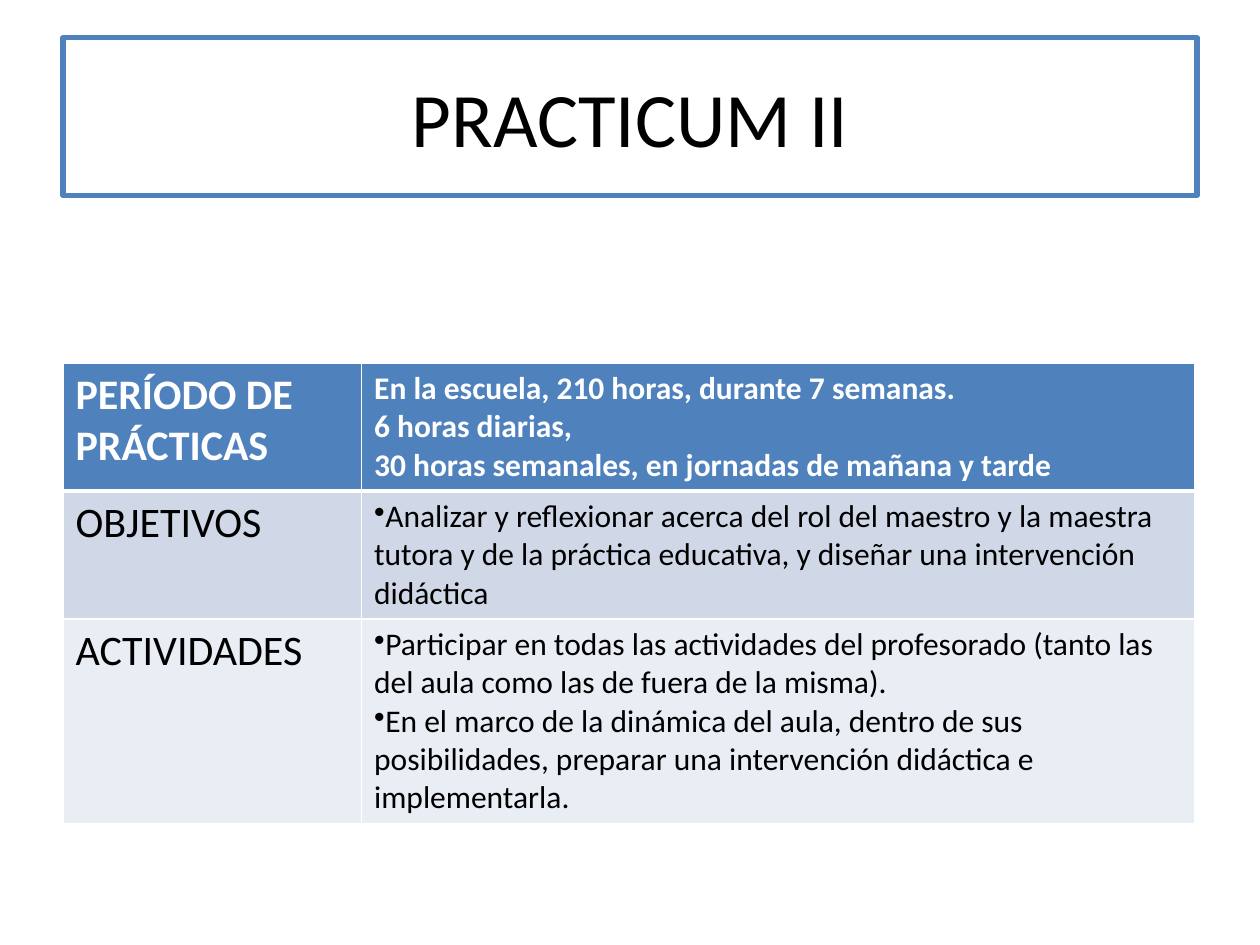
from lxml.etree import SubElement
from pptx import Presentation
from pptx.dml.color import RGBColor
from pptx.enum.text import MSO_ANCHOR, PP_ALIGN
from pptx.oxml.ns import qn
from pptx.util import Inches, Pt

FONT = "Calibri"
BLUE, WHITE, BLACK = "4F81BD", "FFFFFF", "000000"
ROW_FILLS = [BLUE, "D0D8E8", "E9EDF4"]
COLUMN_WIDTHS = [2.37, 6.61]
ROW_HEIGHT = 0.41  # minimum height, rows grow with their text

ROWS = [
    ("PERÍODO DE PRÁCTICAS", [
        "En la escuela, 210 horas, durante 7 semanas.",
        "6 horas diarias,",
        "30 horas semanales, en jornadas de mañana y tarde"]),
    ("OBJETIVOS", [
        "Analizar y reflexionar acerca del rol del maestro y la maestra tutora "
        "y de la práctica educativa, y diseñar una intervención didáctica"]),
    ("ACTIVIDADES", [
        "Participar en todas las actividades del profesorado "
        "(tanto las del aula como las de fuera de la misma).",
        "En el marco de la dinámica del aula, dentro de sus posibilidades, "
        "preparar una intervención didáctica e implementarla."]),
]


def color(value):
    return RGBColor.from_string(value)


def format_text(text_frame, size, text_color, bold=False):
    for paragraph in text_frame.paragraphs:
        for run in paragraph.runs:
            run.font.name = FONT
            run.font.size = Pt(size)
            run.font.bold = bold
            run.font.color.rgb = color(text_color)


def add_bullets(text_frame):
    for paragraph in text_frame.paragraphs:
        properties = paragraph._p.get_or_add_pPr()
        SubElement(properties, qn("a:buChar"), char="•")


def set_borders(cell, bottom_width):
    """Draw white borders; call before the fill, which follows them in the XML."""
    properties = cell._tc.get_or_add_tcPr()
    widths = {"a:lnL": 1, "a:lnR": 1, "a:lnT": 1, "a:lnB": bottom_width}
    for tag, width in widths.items():
        line = SubElement(properties, qn(tag), w=str(Pt(width)))
        fill = SubElement(line, qn("a:solidFill"))
        SubElement(fill, qn("a:srgbClr"), val=WHITE)


def add_title(slide, text):
    title = slide.shapes.title
    title.left, title.top = Inches(0.5), Inches(0.3)
    title.width, title.height = Inches(9), Inches(1.25)
    title.line.color.rgb = color(BLUE)
    title.line.width = Pt(3)
    title.text_frame.text = text
    title.text_frame.vertical_anchor = MSO_ANCHOR.MIDDLE
    title.text_frame.paragraphs[0].alignment = PP_ALIGN.CENTER
    format_text(title.text_frame, 44, BLACK)


def add_practicum_table(slide):
    frame = slide.shapes.add_table(
        len(ROWS), len(COLUMN_WIDTHS), Inches(0.5), Inches(2.88),
        Inches(sum(COLUMN_WIDTHS)), Inches(ROW_HEIGHT * len(ROWS)))
    table = frame.table
    for column, width in zip(table.columns, COLUMN_WIDTHS):
        column.width = Inches(width)

    for row_index, (heading, details) in enumerate(ROWS):
        is_header = row_index == 0
        text_color = WHITE if is_header else BLACK
        contents = [(heading, 24), ("\n".join(details), 18)]
        for column_index, (text, size) in enumerate(contents):
            cell = table.cell(row_index, column_index)
            set_borders(cell, 3 if is_header else 1)
            cell.fill.solid()
            cell.fill.fore_color.rgb = color(ROW_FILLS[row_index])
            cell.text_frame.text = text
            format_text(cell.text_frame, size, text_color, is_header)
            if column_index == 1 and not is_header:
                add_bullets(cell.text_frame)
    frame.height = Inches(3.6)


def main():
    presentation = Presentation()
    presentation.slide_width = Inches(10)
    presentation.slide_height = Inches(7.5)
    slide = presentation.slides.add_slide(presentation.slide_layouts[5])  # title only
    add_practicum_table(slide)
    add_title(slide, "PRACTICUM II")
    presentation.save("out.pptx")


if __name__ == "__main__":
    main()
